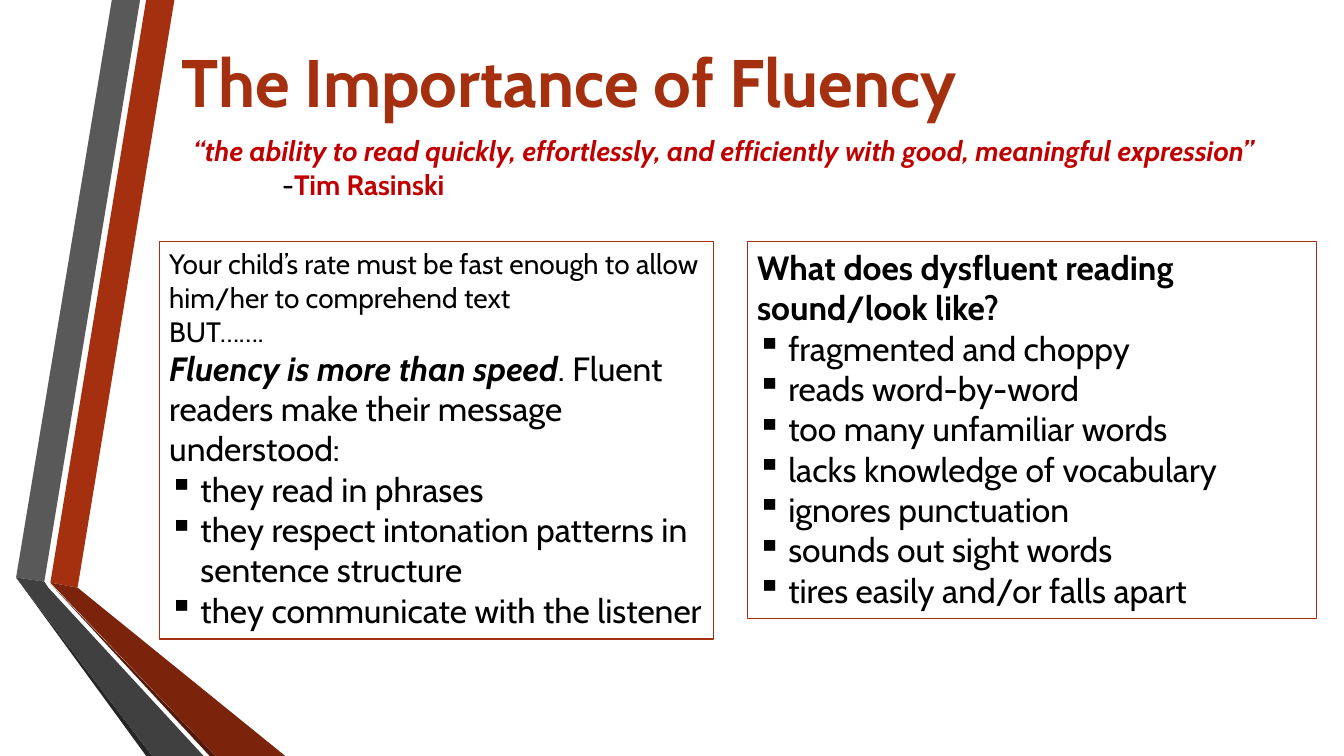
from lxml import etree
from pptx import Presentation
from pptx.dml.color import RGBColor
from pptx.enum import shapes, text
from pptx.oxml import ns
from pptx.util import Inches, Pt

COLORS = {
    "rust": "A5300F", "rust_dark": "7C240B", "rust_edge": "521808",
    "gray": "595959", "gray_dark": "404040", "gray_edge": "262626",
    "red": "C00000", "black": "000000",
}
FONT = "Cabin"
INDENT = 0.31

RIBBONS = [
    ("rust", [(0.5, 5.78), (0.77, 5.83), (1.73, 0), (1.45, 0)]),
    ("gray", [(1.39, 0), (1.11, 0), (0.16, 5.73), (0.44, 5.77)]),
    ("gray_edge", [(0.16, 5.73), (1.45, 7.5), (1.51, 7.5)]),
    ("rust_edge", [(0.5, 5.79), (2.08, 7.5), (2.14, 7.5)]),
    ("rust_dark", [(0.5, 5.78), (2.14, 7.5), (2.83, 7.5), (0.77, 5.83)]),
    ("gray_dark", [(0.16, 5.73), (1.51, 7.5), (2.02, 7.5), (0.48, 5.83), (0.44, 5.77)]),
]

TITLE = [("plain", [("The Importance of Fluency", 48, "rust", "b")])]
QUOTE = [
    ("plain", [("“the ability to read quickly, effortlessly, and efficiently "
                "with good, meaningful expression”", 20, "red", "bi")]),
    ("credit", [("-", 20, "black", ""), ("Tim Rasinski", 20, "red", "b")]),
]


def bullets(*lines):
    return [("bullet", [(line, 24, "black", "")]) for line in lines]


FLUENT = [
    ("plain", [("Your child’s rate must be fast enough to allow him/her to comprehend text",
                20, "black", "")]),
    ("plain", [("BUT…….", 20, "black", "")]),
    ("plain", [("Fluency is more than speed", 24, "black", "bi"),
               (". Fluent readers make their message understood:", 24, "black", "")]),
] + bullets(
    "they read in phrases",
    "they respect intonation patterns in sentence structure",
    "they communicate with the listener",
)
DYSFLUENT = [
    ("plain", [("What does dysfluent reading sound/look like?", 24, "black", "b")]),
] + bullets(
    "fragmented and choppy",
    "reads word-by-word",
    "too many unfamiliar words",
    "lacks knowledge of vocabulary",
    "ignores punctuation",
    "sounds out sight words",
    "tires easily and/or falls apart",
)

BOXES = [
    (TITLE, (1.7, 0.31, 10.96, 0.98), "middle", False),
    (QUOTE, (1.82, 1.28, 10.98, 0.77), "top", False),
    (FLUENT, (1.58, 2.4, 5.5, 3.94), "top", True),
    (DYSFLUENT, (7.41, 2.4, 5.65, 3.74), "top", True),
]
ANCHORS = {"top": text.MSO_ANCHOR.TOP, "middle": text.MSO_ANCHOR.MIDDLE}
INDENTS = {"plain": (0, 0), "credit": (0.88, 0), "bullet": (INDENT, -INDENT)}


def rgb(name):
    return RGBColor.from_string(COLORS[name])


def add_ribbon(page, color, points):
    corners = [(Inches(x), Inches(y)) for x, y in points]
    builder = page.shapes.build_freeform(*corners[0])
    builder.add_line_segments(corners[1:], close=True)
    ribbon = builder.convert_to_shape()
    ribbon.shadow.inherit = False
    ribbon.fill.solid()
    ribbon.fill.fore_color.rgb = rgb(color)
    ribbon.line.fill.background()


def write(frame, paragraphs):
    for index, (kind, spans) in enumerate(paragraphs):
        para = frame.add_paragraph() if index else frame.paragraphs[0]
        para.alignment = text.PP_ALIGN.LEFT
        left, first = INDENTS[kind]
        properties = para._p.get_or_add_pPr()
        properties.set("marL", str(Inches(left)))
        properties.set("indent", str(Inches(first)))
        if kind == "bullet":
            etree.SubElement(properties, ns.qn("a:buChar")).set("char", "▪")
        for words, size, color, style in spans:
            span = para.add_run()
            span.text = words
            span.font.name = FONT
            span.font.size = Pt(size)
            span.font.color.rgb = rgb(color)
            span.font.bold = "b" in style
            span.font.italic = "i" in style


def add_box(page, paragraphs, place, anchor, framed):
    place = [Inches(length) for length in place]
    if framed:
        box = page.shapes.add_shape(shapes.MSO_SHAPE.RECTANGLE, *place)
        box.shadow.inherit = False
        box.fill.background()
        box.line.color.rgb = rgb("rust")
        box.line.width = Pt(0.75)
    else:
        box = page.shapes.add_textbox(*place)
    box.text_frame.word_wrap = True
    box.text_frame.vertical_anchor = ANCHORS[anchor]
    write(box.text_frame, paragraphs)


def main():
    deck = Presentation()
    deck.slide_width, deck.slide_height = Inches(13.33), Inches(7.5)
    page = deck.slides.add_slide(deck.slide_layouts[6])
    for ribbon in RIBBONS:
        add_ribbon(page, *ribbon)
    for box in BOXES:
        add_box(page, *box)
    deck.save("out.pptx")


if __name__ == "__main__":
    main()
